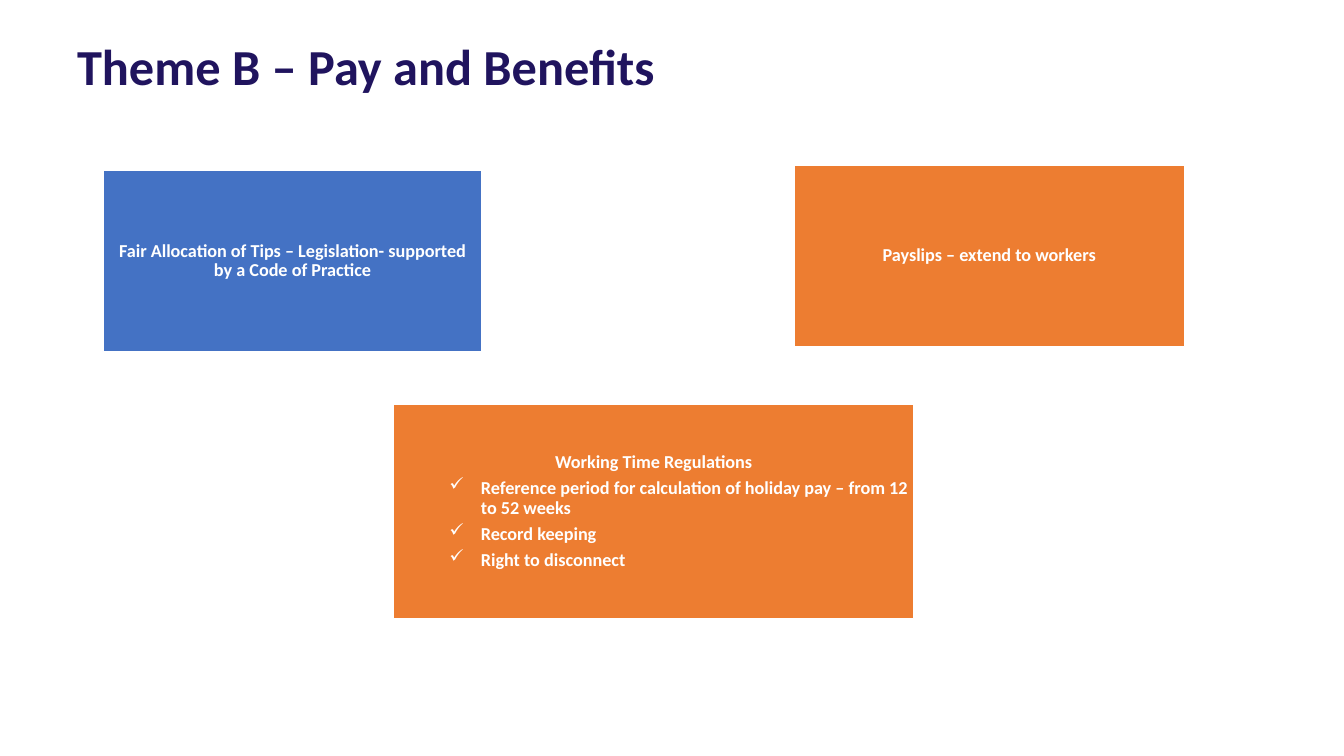
from lxml.etree import SubElement
from pptx import Presentation
from pptx.dml.color import RGBColor
from pptx.enum.shapes import MSO_SHAPE
from pptx.enum.text import MSO_ANCHOR, PP_ALIGN
from pptx.oxml.ns import qn
from pptx.util import Pt

PX = 9525  # EMU per px, 96 px to the inch
COLORS = {"navy": "20145E", "blue": "4472C4", "orange": "ED7D31", "white": "FFFFFF"}


def color(name):
    return RGBColor.from_string(COLORS[name])


def write(paragraph, text, size, ink, **layout):
    paragraph.add_run().text = text
    for key, value in layout.items():
        setattr(paragraph, key, value)
    font = paragraph.runs[0].font
    for key, value in {"name": "Calibri", "size": Pt(size), "bold": True}.items():
        setattr(font, key, value)
    font.color.rgb = color(ink)


deck = Presentation()
deck.slide_width, deck.slide_height = 1280 * PX, 720 * PX
slide = deck.slides.add_slide(deck.slide_layouts[6])

# Title
title = slide.shapes.add_textbox(64 * PX, 29 * PX, 1152 * PX, 82 * PX)
title.text_frame.word_wrap = True
write(title.text_frame.paragraphs[0], "Theme B – Pay and Benefits", 36, "navy", space_after=Pt(6))

# Proposal boxes: left, top, width, height, fill, heading, checked points
proposals = [
    (98, 162, 361, 173, "blue",
     "Fair Allocation of Tips – Legislation- supported by a Code of Practice", []),
    (756, 157, 372, 173, "orange", "Payslips – extend to workers", []),
    (375, 385, 495, 204, "orange", "Working Time Regulations",
     ["Reference period for calculation of holiday pay – from 12 to 52 weeks",
      "Record keeping", "Right to disconnect"]),
]
spacing = {"line_spacing": 0.9, "space_after": Pt(4.55)}

for left, top, width, height, fill, heading, points in proposals:
    proposal = slide.shapes.add_shape(
        MSO_SHAPE.RECTANGLE, left * PX, top * PX, width * PX, height * PX)
    proposal.shadow.inherit = False
    proposal.fill.solid()
    proposal.fill.fore_color.rgb = color(fill)
    proposal.line.color.rgb = color("white")
    proposal.line.width = Pt(1)

    frame = proposal.text_frame
    frame.word_wrap = True
    frame.vertical_anchor = MSO_ANCHOR.MIDDLE
    for side in ("left", "top", "right", "bottom"):
        setattr(frame, f"margin_{side}", 5 * PX)
    write(frame.paragraphs[0], heading, 13, "white", alignment=PP_ALIGN.CENTER, **spacing)

    # Check-marked points
    for point in points:
        paragraph = frame.add_paragraph()
        properties = paragraph._p.get_or_add_pPr()
        properties.set("marL", str(78 * PX))
        properties.set("indent", str(-30 * PX))
        SubElement(properties, qn("a:buChar"), char="✓")
        write(paragraph, point, 13, "white", alignment=PP_ALIGN.LEFT, level=1, **spacing)

deck.save("out.pptx")
